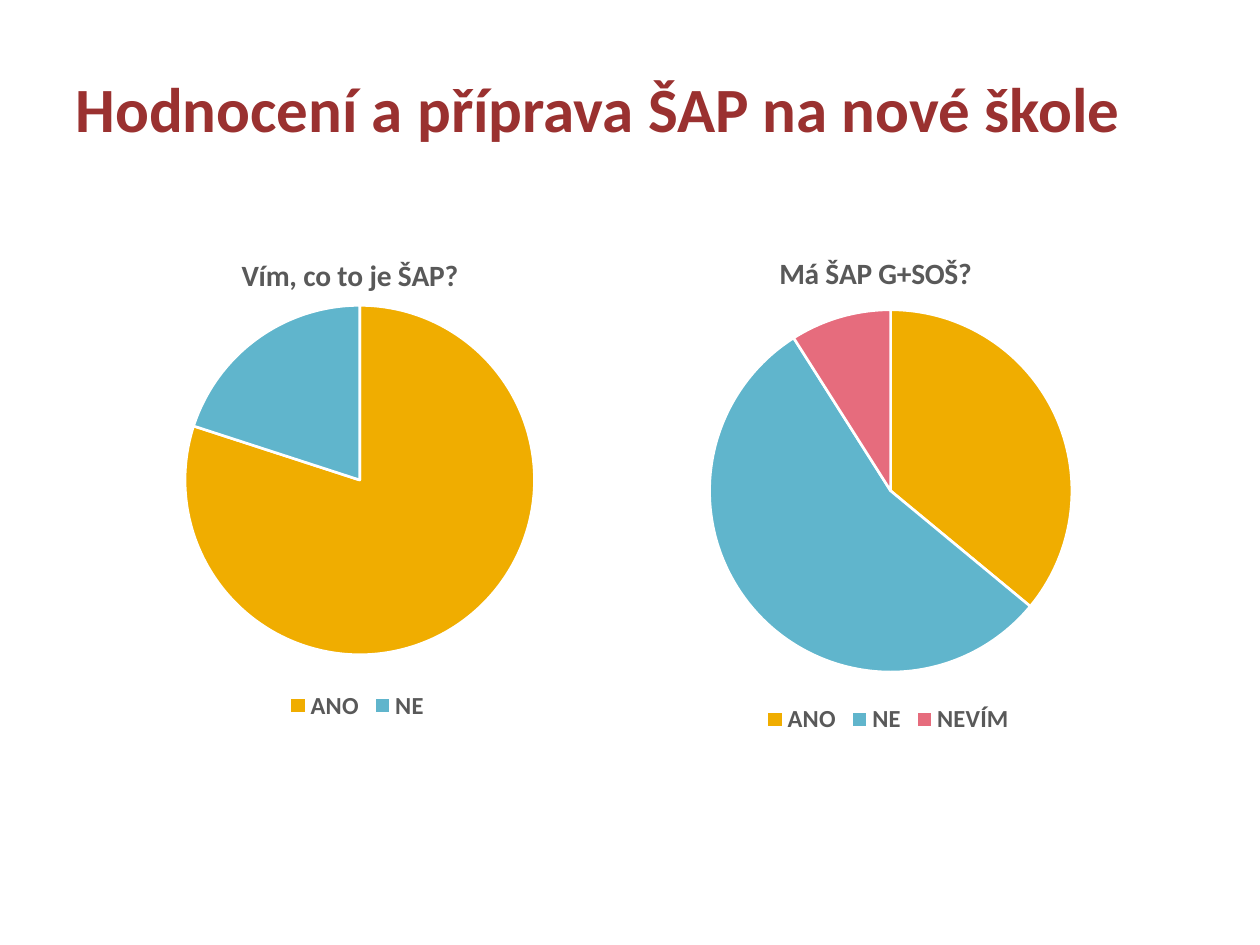
from lxml import etree
from pptx import Presentation
from pptx.chart.data import CategoryChartData
from pptx.dml.color import RGBColor
from pptx.enum.chart import XL_CHART_TYPE as ChartType, XL_LEGEND_POSITION as LegendPosition
from pptx.enum.text import MSO_ANCHOR, MSO_AUTO_SIZE, PP_ALIGN
from pptx.oxml.ns import qn
from pptx.util import Inches, Pt

# Content: box in inches, layouts as fractions of the chart
TITLE = "Hodnocení a příprava ŠAP na nové škole"
CHARTS = [
    {"question": "Vím, co to je ŠAP?", "box": (0.75, 1.74, 4.17, 4.02),
     "answers": {"ANO": 80, "NE": 20},
     "title_at": (0.27, 0.06), "pie_at": (0.17, 0.17, 0.67, 0.69)},
    {"question": "Má ŠAP G+SOŠ?", "box": (5.08, 1.76, 3.94, 4.11),
     "answers": {"ANO": 36, "NE": 55, "NEVÍM": 9},
     "title_at": (0.27, 0.05), "pie_at": (0.14, 0.17, 0.73, 0.7)},
]
SLICE_COLORS = ["F0AD00", "60B5CC", "E66C7D"]
RED, GRAY, BLACK, WHITE = "9A3130", "595959", "000000", "FFFFFF"


def rgb(color):
    return RGBColor.from_string(color)


def format_font(font, size, color):
    font.name, font.size, font.bold = "Calibri", Pt(size), True
    font.color.rgb = rgb(color)


def write_text(frame, text, size, color, align=None):
    frame.text = text
    paragraph = frame.paragraphs[0]
    paragraph.alignment = align
    format_font(paragraph.runs[0].font, size, color)


def set_layout(parent, position, index, inner=False):
    """Give a chart part a manual layout, as child number index."""
    for old in parent.findall(qn("c:layout")):
        parent.remove(old)
    layout = etree.Element(qn("c:layout"))
    manual = etree.SubElement(layout, qn("c:manualLayout"))
    settings = [("layoutTarget", "inner")] if inner else []
    settings += [("xMode", "edge"), ("yMode", "edge")]
    settings += zip("xywh", position)
    for name, value in settings:
        etree.SubElement(manual, qn(f"c:{name}")).set("val", str(value))
    parent.insert(index, layout)


def add_pie(slide, question, box, answers, title_at, pie_at):
    data = CategoryChartData()
    data.categories = list(answers)
    data.add_series(question, list(answers.values()))
    chart = slide.shapes.add_chart(ChartType.PIE, *map(Inches, box), data).chart
    format_font(chart.font, 14, BLACK)

    # Title and legend
    chart.has_title = True
    write_text(chart.chart_title.text_frame, question, 16.8, GRAY)
    set_layout(chart.chart_title.element, title_at, 1)
    chart.chart_title.include_in_layout = False if hasattr(chart.chart_title, "include_in_layout") else None
    chart.has_legend = True
    chart.legend.position = LegendPosition.BOTTOM
    chart.legend.include_in_layout = False
    format_font(chart.legend.font, 14, GRAY)

    # Slices
    plot = chart.plots[0]
    plot.vary_by_categories = True
    set_layout(chart.element.find(".//" + qn("c:plotArea")), pie_at, 0, inner=True)
    for index, color in enumerate(SLICE_COLORS[:len(answers)]):
        slice_format = plot.series[0].points[index].format
        slice_format.fill.solid()
        slice_format.fill.fore_color.rgb = rgb(color)
        slice_format.line.color.rgb = rgb(WHITE)
        slice_format.line.width = Pt(1.5)


def main():
    presentation = Presentation()
    presentation.slide_width, presentation.slide_height = Inches(10), Inches(7.5)
    slide = presentation.slides.add_slide(presentation.slide_layouts[5])

    # Slide title
    title = slide.shapes.title
    title.left, title.top, title.width, title.height = map(Inches, (0.5, 0.17, 9, 1.37))
    frame = title.text_frame
    frame.word_wrap = True
    frame.auto_size = MSO_AUTO_SIZE.NONE
    frame.vertical_anchor = MSO_ANCHOR.MIDDLE
    frame.margin_left = Inches(0.1)
    frame.margin_right = frame.margin_top = frame.margin_bottom = Inches(0.05)
    write_text(frame, TITLE, 36, RED, align=PP_ALIGN.LEFT)

    # Pie charts
    for chart in CHARTS:
        add_pie(slide, **chart)
    presentation.save("out.pptx")


if __name__ == "__main__":
    main()
